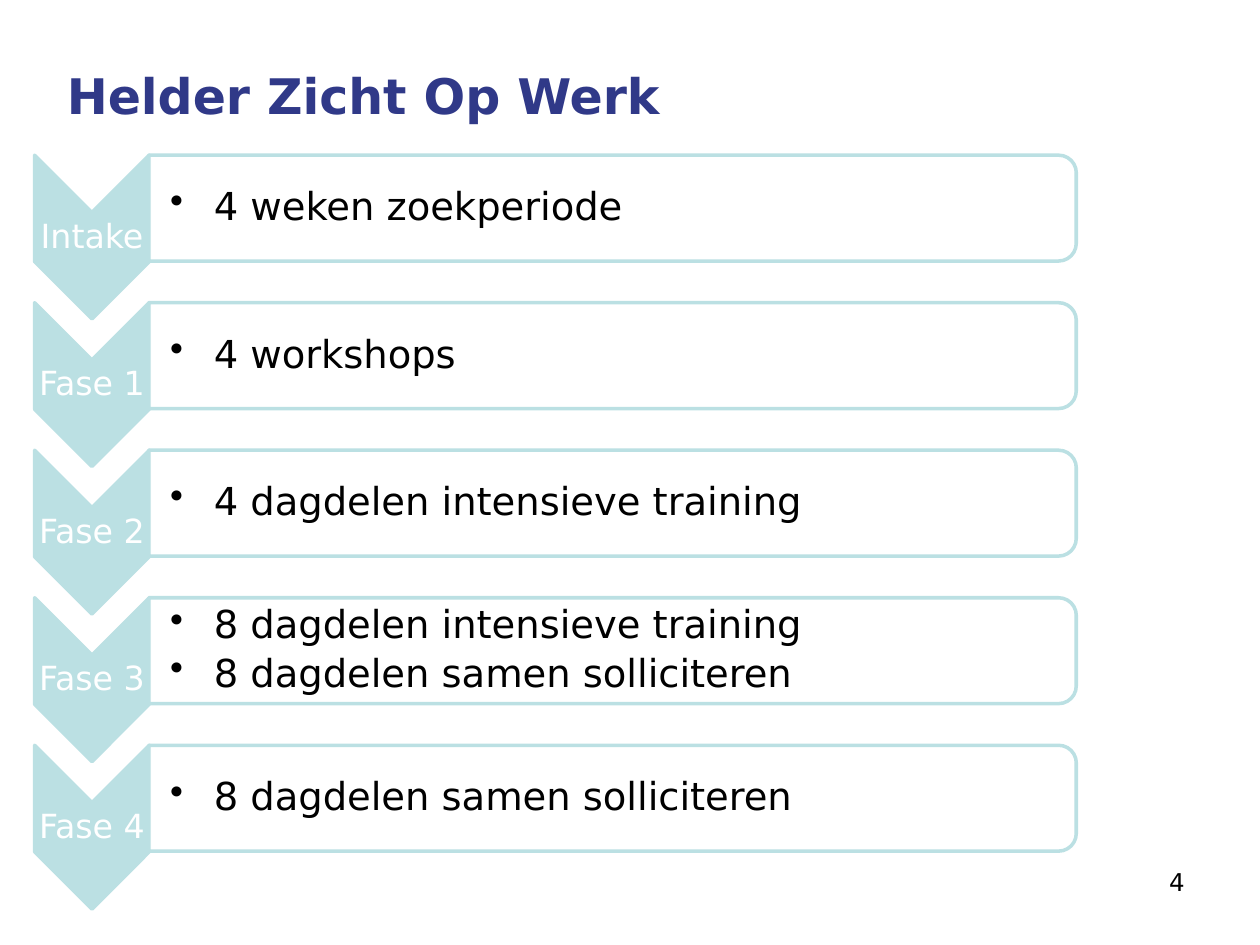
from lxml import etree
from pptx import Presentation
from pptx.dml.color import RGBColor
from pptx.enum import shapes, text
from pptx.oxml import ns
from pptx.util import Pt

PHASES = [
    ("Intake", ["4 weken zoekperiode"]),
    ("Fase 1", ["4 workshops"]),
    ("Fase 2", ["4 dagdelen intensieve training"]),
    ("Fase 3", ["8 dagdelen intensieve training", "8 dagdelen samen solliciteren"]),
    ("Fase 4", ["8 dagdelen samen solliciteren"]),
]
FIRST_TOP, ROW_PITCH = 88.7, 84.3
CHEVRON_LEFT, CHEVRON_WIDTH, CHEVRON_HEIGHT = 19.8, 65.5, 93.6
PANEL_LEFT, PANEL_WIDTH, PANEL_HEIGHT = 85, 530, 60.5


def color(value):
    return RGBColor.from_string(value)


class PhaseSlide:
    FONT = "DejaVu Sans"
    TITLE, ACCENT, WHITE, BLACK = "303988", "BBE0E3", "FFFFFF", "000000"

    def __init__(self, deck):
        self.slide = deck.slides.add_slide(deck.slide_layouts[5])

    def format_text(self, para, size, value, align=text.PP_ALIGN.LEFT, bold=False):
        para.alignment = align
        for span in para.runs:
            font = span.font
            font.name, font.size, font.bold = self.FONT, Pt(size), bold
            font.color.rgb = color(value)

    def title(self, words, left, top, width, height):
        box = self.slide.shapes.title
        box.left, box.top, box.width, box.height = map(Pt, (left, top, width, height))
        box.text_frame.text = words
        box.text_frame.vertical_anchor = text.MSO_ANCHOR.MIDDLE
        self.format_text(box.text_frame.paragraphs[0], 28, self.TITLE, bold=True)

    def text_box(self, words, left, top, width, height):
        box = self.slide.shapes.add_textbox(*map(Pt, (left, top, width, height)))
        frame = box.text_frame
        frame.word_wrap = True
        frame.text = words
        return frame

    def turned_shape(self, kind, fill, left, top, width, height):
        """Add a shape turned 90 degrees that covers the given area on the slide."""
        shift = (width - height) / 2
        shape = self.slide.shapes.add_shape(
            kind, Pt(left + shift), Pt(top - shift), Pt(height), Pt(width))
        shape.rotation = 90
        shape.shadow.inherit = False
        shape.fill.solid()
        shape.fill.fore_color.rgb = color(fill)
        shape.line.color.rgb = color(self.ACCENT)
        shape.line.width = Pt(2)
        return shape

    def chevron(self, label, top):
        self.turned_shape(shapes.MSO_SHAPE.CHEVRON, self.ACCENT,
                          CHEVRON_LEFT, top, CHEVRON_WIDTH, CHEVRON_HEIGHT)
        frame = self.text_box(label, CHEVRON_LEFT, top + 33, CHEVRON_WIDTH, 28)
        frame.vertical_anchor = text.MSO_ANCHOR.MIDDLE
        frame.margin_left = frame.margin_right = Pt(0.7)
        frame.margin_top = frame.margin_bottom = Pt(0.7)
        para = frame.paragraphs[0]
        para.line_spacing = 0.9
        self.format_text(para, 19, self.WHITE, text.PP_ALIGN.CENTER)

    def panel(self, items, top):
        shape = self.turned_shape(shapes.MSO_SHAPE.ROUND_2_SAME_RECTANGLE, self.WHITE,
                                  PANEL_LEFT, top, PANEL_WIDTH, PANEL_HEIGHT)
        fill = shape.fill._xPr.find(ns.qn("a:solidFill"))
        etree.SubElement(fill[0], ns.qn("a:alpha"), val="90000")

        frame = self.text_box("\n".join(items), PANEL_LEFT, top + 2.9, 527, 54.7)
        frame.vertical_anchor = text.MSO_ANCHOR.MIDDLE
        frame.margin_left = Pt(12.2)
        frame.margin_right = frame.margin_top = frame.margin_bottom = Pt(1.4)
        for para in frame.paragraphs:
            self.bullet(para, 25)
            para.line_spacing = 0.9
            para.space_after = Pt(4)
            self.format_text(para, 22, self.BLACK)

    def bullet(self, para, indent):
        properties = para._p.get_or_add_pPr()
        properties.set("marL", str(Pt(indent)))
        properties.set("indent", str(-Pt(indent)))
        etree.SubElement(properties, ns.qn("a:buChar"), char="•")

    def page_number(self, number):
        frame = self.text_box(number, 516, 492, 168, 37.5)
        self.format_text(frame.paragraphs[0], 14, self.BLACK, text.PP_ALIGN.RIGHT)


def main():
    deck = Presentation()
    deck.slide_width, deck.slide_height = Pt(720), Pt(540)
    page = PhaseSlide(deck)
    page.title("Helder Zicht Op Werk", 31, 26, 657, 57)
    page.page_number("4")
    for row, (label, items) in enumerate(PHASES):
        top = FIRST_TOP + row * ROW_PITCH
        page.chevron(label, top)
        page.panel(items, top)
    deck.save("out.pptx")


if __name__ == "__main__":
    main()
